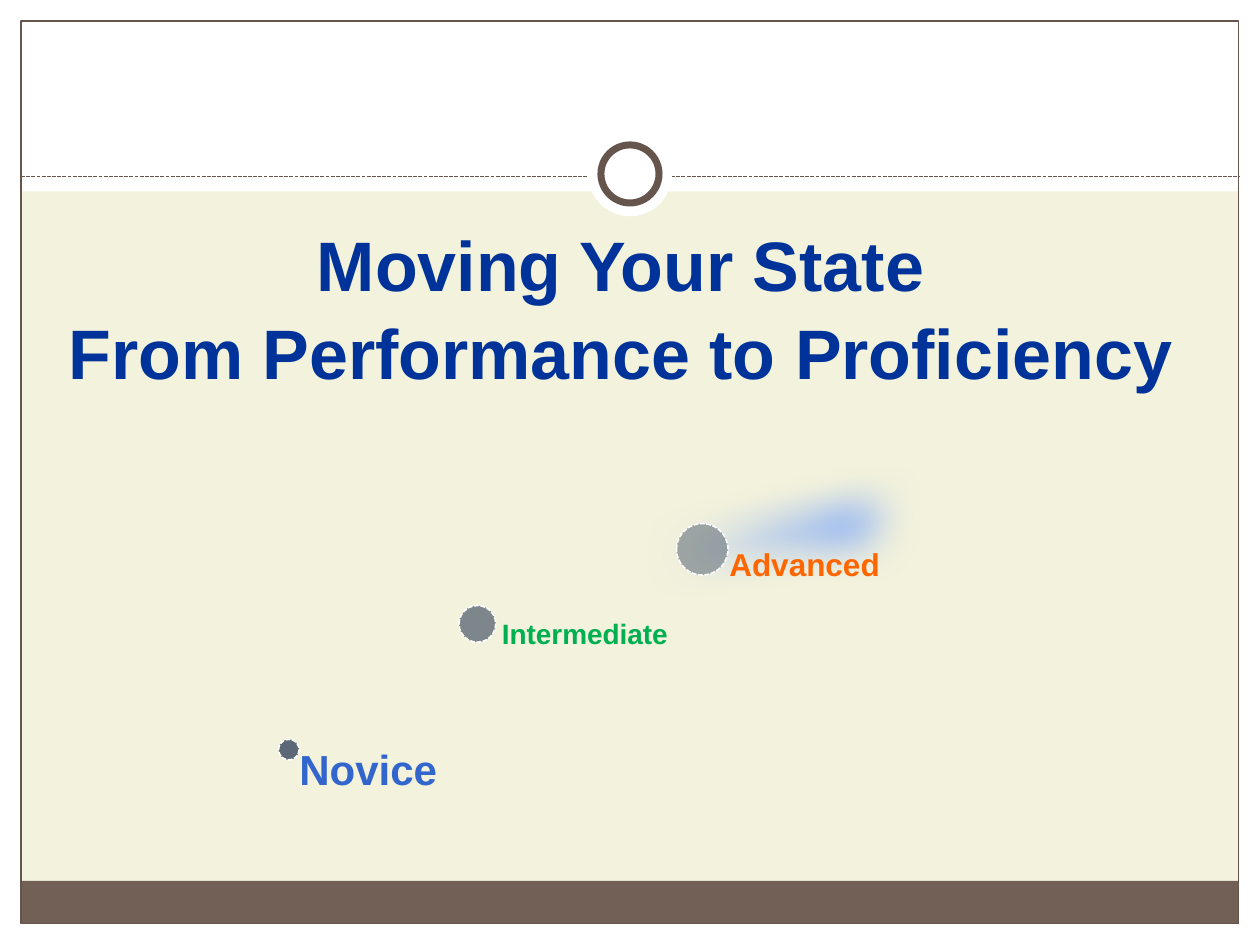
from dataclasses import dataclass

from lxml import etree
from pptx import Presentation
from pptx.dml.color import RGBColor
from pptx.enum import dml, shapes, text
from pptx.oxml import ns
from pptx.util import Pt

WHITE = RGBColor(0xFF, 0xFF, 0xFF)
CREAM = RGBColor(0xF3, 0xF2, 0xDC)
BROWN = RGBColor(0x72, 0x60, 0x56)
DARK_BROWN = RGBColor(0x65, 0x55, 0x4C)
NAVY = RGBColor(0x00, 0x33, 0x99)
SKY = RGBColor(0x66, 0x99, 0xFF)
SLATE = RGBColor(0x4C, 0x5A, 0x6A)
BLUE = RGBColor(0x33, 0x66, 0xCC)
GREEN = RGBColor(0x00, 0xB0, 0x50)
ORANGE = RGBColor(0xFF, 0x66, 0x00)

FONT = "Arial"
W, H = 720, 540
MARGIN = 12.1
HEADER_H = 109.4
RULE_Y = 100.8
FOOTER_Y = 503.4
RECT = shapes.MSO_SHAPE.RECTANGLE
OVAL = shapes.MSO_SHAPE.OVAL
DASH = dml.MSO_LINE.SQUARE_DOT


@dataclass(frozen=True)
class Box:
    x: float
    y: float
    w: float
    h: float

    def lengths(self) -> list[Pt]:
        return [Pt(v) for v in (self.x, self.y, self.w, self.h)]


@dataclass(frozen=True)
class Level:
    name: str
    dot: Box
    opacity: int
    label: Box
    inset: float
    size: float
    color: RGBColor


LEVELS = [
    Level("Novice", Box(159.2, 422.5, 11.7, 11.7), 90,
          Box(164.9, 428.4, 105, 81.4), 6.2, 24, BLUE),
    Level("Intermediate", Box(262.3, 346, 21, 21), 70,
          Box(275.6, 354.5, 108, 152.6), 11.2, 16, GREEN),
    Level("Advanced", Box(386.6, 299.2, 29.4, 29.4), 50,
          Box(401.2, 313.9, 108, 195.1), 15.6, 18, ORANGE),
]


def add_shape(s, kind, box: Box, fill: RGBColor | None = None,
              line: RGBColor | None = None, width: float = 0.75):
    sp = s.shapes.add_shape(kind, *box.lengths())
    sp.shadow.inherit = False
    if fill is None:
        sp.fill.background()
    else:
        sp.fill.solid()
        sp.fill.fore_color.rgb = fill
    if line is None:
        sp.line.fill.background()
    else:
        sp.line.color.rgb = line
        sp.line.width = Pt(width)
    return sp


def add_text(s, box: Box, words: str, size: float, color: RGBColor,
             spacing: float, align=text.PP_ALIGN.LEFT,
             insets: tuple = (7.2, 3.6, 7.2, 3.6)) -> None:
    tf = s.shapes.add_textbox(*box.lengths()).text_frame
    tf.word_wrap = True
    (tf.margin_left, tf.margin_top,
     tf.margin_right, tf.margin_bottom) = [Pt(v) for v in insets]
    tf.text = words
    p = tf.paragraphs[0]
    p.alignment = align
    p.line_spacing = spacing
    for r in p.runs:
        r.font.name = FONT
        r.font.size = Pt(size)
        r.font.bold = True
        r.font.color.rgb = color


def draw_frame(s) -> None:
    """Draw the white margins, footer band, border, dashed rule and ring."""
    for box in (Box(0, H - MARGIN, W, MARGIN), Box(0, 0, W, HEADER_H),
                Box(0, 0, MARGIN, H), Box(W - MARGIN, 0, MARGIN, H)):
        add_shape(s, RECT, box, WHITE)
    inner_w = W - 2 * MARGIN
    add_shape(s, RECT, Box(MARGIN, FOOTER_Y, inner_w, H - MARGIN - FOOTER_Y), BROWN)
    add_shape(s, RECT, Box(MARGIN, MARGIN, inner_w, H - 2 * MARGIN), line=DARK_BROWN)

    rule = s.shapes.add_connector(shapes.MSO_CONNECTOR.STRAIGHT, Pt(MARGIN),
                                  Pt(RULE_Y), Pt(W - MARGIN), Pt(RULE_Y))
    rule.line.color.rgb = DARK_BROWN
    rule.line.width = Pt(0.75)
    rule.line.dash_style = DASH
    etree.SubElement(rule._element.spPr, ns.qn("a:effectLst"))

    add_shape(s, OVAL, Box(336, 75.6, 48, 48), WHITE)
    add_shape(s, OVAL, Box(343.4, 82.8, 33.2, 33.2), WHITE, DARK_BROWN, 4)


def draw_swoosh(s) -> None:
    sp = add_shape(s, shapes.MSO_SHAPE.SWOOSH_ARROW, Box(102, 228.4, 450, 281.2), SKY)
    sp.adjustments[0] = sp.adjustments[1] = 0.25
    effects = sp._element.spPr.find(ns.qn("a:effectLst"))
    etree.SubElement(effects, ns.qn("a:softEdge"), rad=str(Pt(25)))


def draw_level(s, level: Level) -> None:
    dot = add_shape(s, OVAL, level.dot, SLATE, WHITE, 0.9)
    dot.line.dash_style = DASH
    color = dot._element.spPr.find(ns.qn("a:solidFill"))[0]
    etree.SubElement(color, ns.qn("a:alpha"), val=str(level.opacity * 1000))
    add_text(s, level.label, level.name, level.size, level.color, 0.9,
             insets=(level.inset, 0, 0, 0))


def main() -> None:
    prs = Presentation()
    prs.slide_width, prs.slide_height = Pt(W), Pt(H)
    s = prs.slides.add_slide(prs.slide_layouts[6])
    s.background.fill.solid()
    s.background.fill.fore_color.rgb = CREAM
    draw_frame(s)
    add_text(s, Box(MARGIN, 120.5, 696, 108),
             "Moving Your State \vFrom Performance to Proficiency ",
             40, NAVY, 1.05, text.PP_ALIGN.CENTER)
    draw_swoosh(s)
    for level in LEVELS:
        draw_level(s, level)
    prs.save("out.pptx")


if __name__ == "__main__":
    main()
